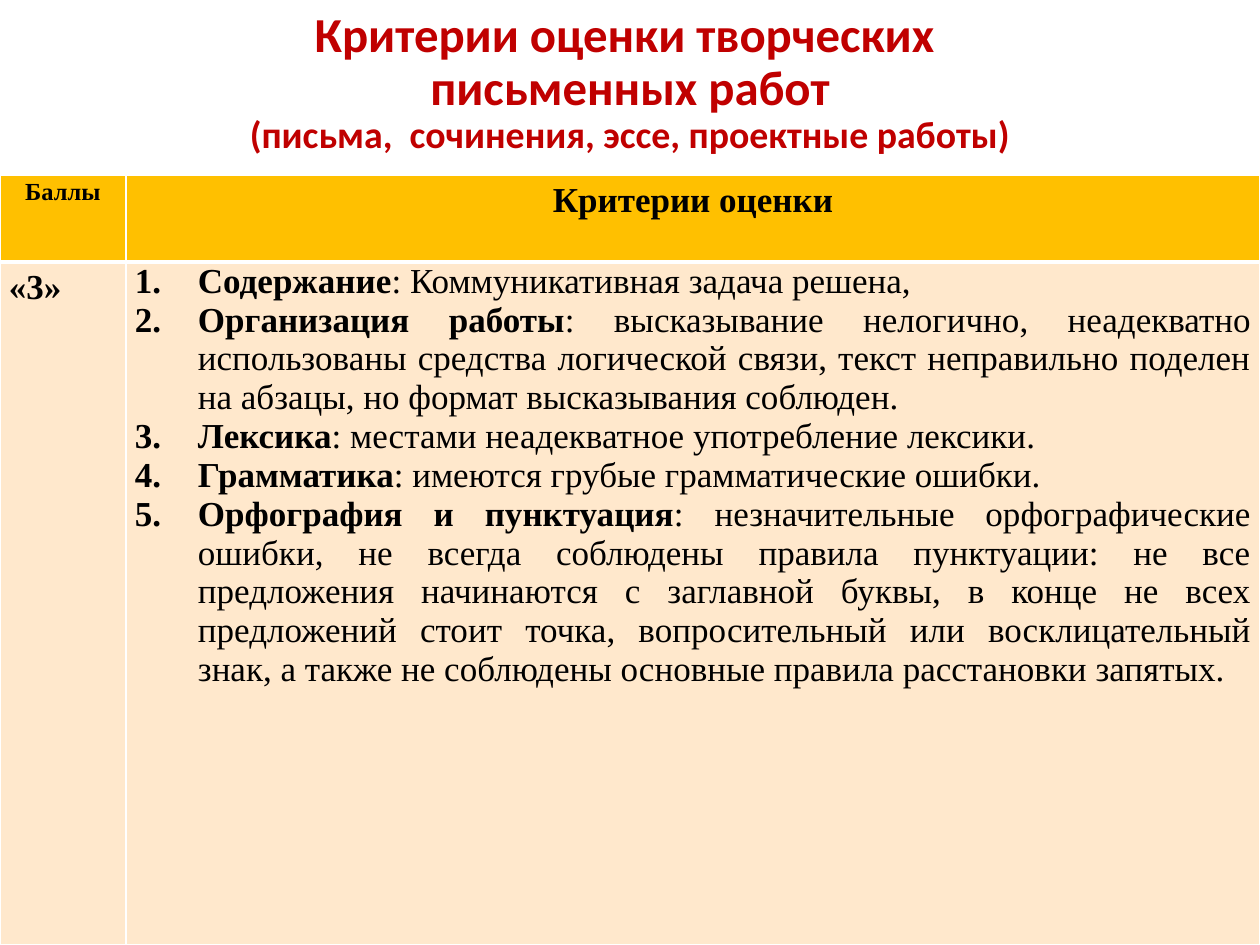
import pptx
import pptx.dml.color
import pptx.enum.text
import pptx.oxml
import pptx.oxml.ns
import pptx.util
from lxml import etree

Cm = pptx.util.Cm
Pt = pptx.util.Pt
ALIGN = pptx.enum.text.PP_ALIGN
ANCHOR = pptx.enum.text.MSO_ANCHOR

COLORS = {"title": "C00000", "header": "FFC000", "body": "FFE8CC",
          "text": "000000", "border": "FFFFFF"}

TITLE = [("Критерии оценки творческих \vписьменных работ\v", 27.9),
         ("(письма,  сочинения, эссе, проектные работы)", 21.6)]

CRITERIA = [
    ("Содержание", ": Коммуникативная задача решена, "),
    ("Организация работы", ": высказывание нелогично, неадекватно использованы "
     "средства логической связи, текст неправильно поделен на абзацы, "
     "но формат высказывания соблюден."),
    ("Лексика", ": местами неадекватное употребление лексики."),
    ("Грамматика", ": имеются грубые грамматические ошибки."),
    ("Орфография и пунктуация", ": незначительные орфографические ошибки, не всегда "
     "соблюдены правила пунктуации: не все предложения начинаются с заглавной буквы, "
     "в конце не всех предложений стоит точка, вопросительный или восклицательный "
     "знак, а также не соблюдены основные правила расстановки запятых."),
]


def add_text(para, text, font="Times New Roman", size=20, bold=True, color="text"):
    """Append text to a paragraph; a vertical tab becomes a line break."""
    for index, line in enumerate(text.split("\v")):
        if index:
            para.add_line_break()
        if line:
            span = para.add_run()
            span.text = line
            span.font.name = font
            span.font.size = Pt(size)
            span.font.bold = bold
            span.font.color.rgb = pptx.dml.color.RGBColor.from_string(COLORS[color])


class SlideBuilder:
    def __init__(self, page):
        self.page = page

    def title(self, parts, left, top, width, height):
        box = self.page.shapes.title
        box.left, box.top, box.width, box.height = map(Cm, (left, top, width, height))
        frame = box.text_frame
        frame.word_wrap = True
        frame.auto_size = pptx.enum.text.MSO_AUTO_SIZE.NONE
        frame.vertical_anchor = ANCHOR.MIDDLE
        frame.margin_top, frame.margin_bottom = 0, Cm(0.84)
        para = frame.paragraphs[0]
        para.alignment = ALIGN.CENTER
        para.line_spacing = 0.9
        para.space_before = Pt(0)
        for text, size in parts:
            add_text(para, text, font="Calibri", size=size, color="title")

    def table(self, left, top, widths, heights):
        frame = self.page.shapes.add_table(
            len(heights), len(widths), Cm(left), Cm(top), Cm(sum(widths)), Cm(sum(heights)))
        grid = frame.table
        for column, width in zip(grid.columns, widths):
            column.width = Cm(width)
        for row, height in zip(grid.rows, heights):
            row.height = Cm(height)
        for index, row in enumerate(grid.rows):
            for cell in row.cells:
                self.format_cell(cell, header=index == 0)
        return grid

    def format_cell(self, cell, header):
        cell.margin_left = cell.margin_right = Cm(0.18)
        cell.margin_top = cell.margin_bottom = 0
        cell.vertical_anchor = ANCHOR.TOP
        props = cell._tc.get_or_add_tcPr()
        for side in "LRTB":
            # The thick rule lies between the header and the body
            thick = side == ("B" if header else "T")
            line = etree.SubElement(props, pptx.oxml.ns.qn(f"a:ln{side}"),
                                    w=str(Pt(3 if thick else 1)))
            fill = etree.SubElement(line, pptx.oxml.ns.qn("a:solidFill"))
            etree.SubElement(fill, pptx.oxml.ns.qn("a:srgbClr"), val=COLORS["border"])
        cell.fill.solid()
        cell.fill.fore_color.rgb = pptx.dml.color.RGBColor.from_string(
            COLORS["header" if header else "body"])

    def label(self, cell, text, align=ALIGN.CENTER, size=20):
        para = cell.text_frame.paragraphs[0]
        para.alignment = align
        para.line_spacing = 1.15
        add_text(para, text, size=size)

    def numbered_list(self, cell, items):
        frame = cell.text_frame
        for index, (name, description) in enumerate(items):
            para = frame.add_paragraph() if index else frame.paragraphs[0]
            para.alignment = ALIGN.JUSTIFY
            props = para._p.get_or_add_pPr()
            props.set("marL", str(Cm(1.27)))
            props.set("indent", str(-Cm(1.27)))
            etree.SubElement(props, pptx.oxml.ns.qn("a:buFont"), typeface="+mj-lt")
            etree.SubElement(props, pptx.oxml.ns.qn("a:buAutoNum"), type="arabicPeriod")
            add_text(para, name)
            add_text(para, description, bold=False)


def main():
    deck = pptx.Presentation()
    deck.slide_width, deck.slide_height = Cm(25.4), Cm(19.05)
    builder = SlideBuilder(deck.slides.add_slide(deck.slide_layouts[5]))

    # Criteria table
    grid = builder.table(0, 3.53, widths=(2.54, 22.86), heights=(1.75, 13.77))
    builder.label(grid.cell(0, 0), "Баллы", size=14)
    builder.label(grid.cell(0, 1), "Критерии оценки")
    builder.label(grid.cell(1, 0), "«3»", align=ALIGN.JUSTIFY)
    builder.numbered_list(grid.cell(1, 1), CRITERIA)

    # Heading
    builder.title(TITLE, 1.75, 0.38, 21.9, 3.45)

    deck.save("out.pptx")


if __name__ == "__main__":
    main()
